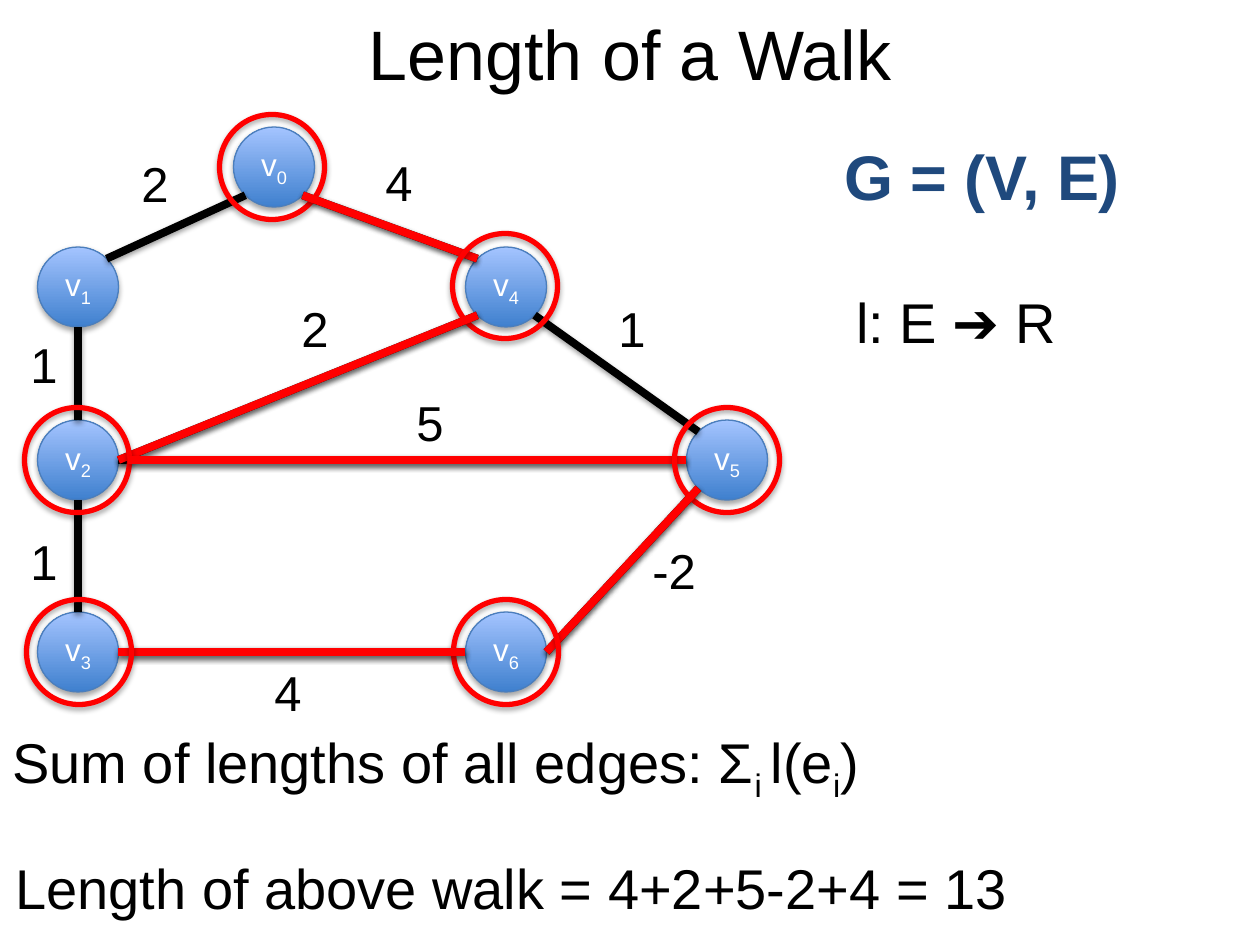
from math import cos, radians, sin

from pptx import Presentation
from pptx.dml.color import RGBColor
from pptx.enum.shapes import MSO_CONNECTOR, MSO_SHAPE
from pptx.enum.text import MSO_ANCHOR, MSO_AUTO_SIZE, PP_ALIGN
from pptx.oxml import parse_xml
from pptx.util import Pt

SCALE = 914400 / 126
NODE_W, NODE_H, RING = 81, 80, 105
BLACK, RED, WHITE = "000000", "FF0000", "FFFFFF"

# Node number: centre
NODES = {1: (78, 287), 0: (274, 167), 2: (78, 460), 6: (506, 652),
         4: (506, 287), 5: (727, 460), 3: (78, 652)}
RINGS = {0: (272, 167), 4: (505, 286), 2: (77, 460),
         5: (727, 460), 6: (506, 652), 3: (79, 652)}
# (from, to): angles, clockwise from the right, where the edge meets each node
EDGES = {(1, 0): (315, 135), (1, 2): (90, 270), (2, 3): (90, 270),
         (0, 4): (45, 225), (4, 2): (135, 0), (6, 3): (180, 0),
         (4, 5): (45, 225), (5, 6): (135, 0), (2, 5): (0, 180)}
WALK = [0, 4, 2, 5, 6, 3]
WEIGHTS = [("2", 129, 147), ("4", 373, 146), ("2", 289, 292),
           ("5", 404, 386), ("1", 606, 292), ("1", 18, 328),
           ("1", 18, 525), ("4", 262, 656), ("-2", 640, 534)]


def px(n):
    return round(n * SCALE)


def rgb(color):
    return RGBColor.from_string(color)


def add_runs(p, text, size, color, bold=False):
    """Write text into p; every second part between bars is a subscript."""
    for i, part in enumerate(text.split("|")):
        r = p.add_run()
        r.text = part
        r.font.name = "Arial"
        r.font.size = Pt(size)
        r.font.bold = bold
        r.font.color.rgb = rgb(color)
        if i % 2:
            r._r.get_or_add_rPr().set("baseline", "-25000")


def add_shadow(sp, distance, opacity):
    """Cast a soft shadow straight down; call after fill and line are set."""
    sp.element.spPr.append(parse_xml(
        '<a:effectLst xmlns:a="http://schemas.openxmlformats.org/drawingml/2006/main">'
        f'<a:outerShdw blurRad="40000" dist="{distance}" dir="5400000" rotWithShape="0">'
        f'<a:srgbClr val="000000"><a:alpha val="{opacity * 1000}"/></a:srgbClr>'
        '</a:outerShdw></a:effectLst>'))


def add_label(s, text, x, y, w, h, size, color=BLACK, bold=False):
    tf = s.shapes.add_textbox(px(x), px(y), px(w), px(h)).text_frame
    tf.word_wrap = False
    tf.auto_size = MSO_AUTO_SIZE.SHAPE_TO_FIT_TEXT
    add_runs(tf.paragraphs[0], text, size, color, bold)


def add_circle(s, center, w, h, line_color, line_width):
    x, y = center
    sp = s.shapes.add_shape(MSO_SHAPE.OVAL, px(x - w / 2), px(y - h / 2), px(w), px(h))
    sp.fill.background()
    sp.line.color.rgb = rgb(line_color)
    sp.line.width = Pt(line_width)
    return sp


def add_node(s, number):
    sp = add_circle(s, NODES[number], NODE_W, NODE_H, "4B7EBC", 0.75)
    sp.fill.gradient()
    sp.fill.gradient_angle = 90
    for stop, color in zip(sp.fill.gradient_stops, ("3F80CE", "A4C4FF")):
        stop.color.rgb = rgb(color)
    add_shadow(sp, 23000, 35)
    tf = sp.text_frame
    tf.vertical_anchor = MSO_ANCHOR.MIDDLE
    p = tf.paragraphs[0]
    p.alignment = PP_ALIGN.CENTER
    add_runs(p, f"v|{number}", 18, WHITE)


def add_ring(s, number):
    add_shadow(add_circle(s, RINGS[number], RING, RING, RED, 3), 23000, 35)


def rim_point(number, angle):
    x, y = NODES[number]
    a = radians(angle)
    return x + NODE_W / 2 * cos(a), y + NODE_H / 2 * sin(a)


def add_edge(s, edge, color, start_gap=0):
    (x1, y1), (x2, y2) = map(rim_point, edge, EDGES[edge])
    line = s.shapes.add_connector(MSO_CONNECTOR.STRAIGHT, px(x1 + start_gap), px(y1),
                                  px(x2), px(y2))
    line.line.color.rgb = rgb(color)
    line.line.width = Pt(4.5)
    add_shadow(line, 20000, 38)


def add_title(s, text):
    title = s.shapes.title
    title.left, title.top, title.width, title.height = map(px, (63, 8, 1134, 89))
    tf = title.text_frame
    tf.vertical_anchor = MSO_ANCHOR.MIDDLE
    p = tf.paragraphs[0]
    p.alignment = PP_ALIGN.CENTER
    add_runs(p, text, 40, BLACK)


def add_graph(s):
    for number in NODES:
        add_node(s, number)
    for edge in EDGES:
        add_edge(s, edge, BLACK)


def add_walk(s):
    add_ring(s, WALK[0])
    for edge in zip(WALK, WALK[1:]):
        # The level edge from v2 starts at its ring
        add_edge(s, edge, RED, start_gap=10 if edge == (2, 5) else 0)
        add_ring(s, edge[1])


def main():
    prs = Presentation()
    prs.slide_width, prs.slide_height = px(1260), px(945)
    s = prs.slides.add_slide(prs.slide_layouts[5])
    add_title(s, "Length of a Walk")
    add_label(s, "G = (V, E)", 832, 131, 304, 89, 36, "1F497D", bold=True)
    add_label(s, "Sum of lengths of all edges: Σ|i |l(e|i|)", 0, 721, 896, 81, 32)
    add_graph(s)
    add_walk(s)
    add_label(s, "Length of above walk = 4+2+5-2+4 = 13", 3, 847, 1027, 81, 32)
    add_label(s, "l: E ➔ R", 844, 281, 239, 81, 32)
    for text, x, y in WEIGHTS:
        add_label(s, text, x, y, 53 if len(text) == 1 else 69, 72, 28)
    prs.save("out.pptx")


if __name__ == "__main__":
    main()
